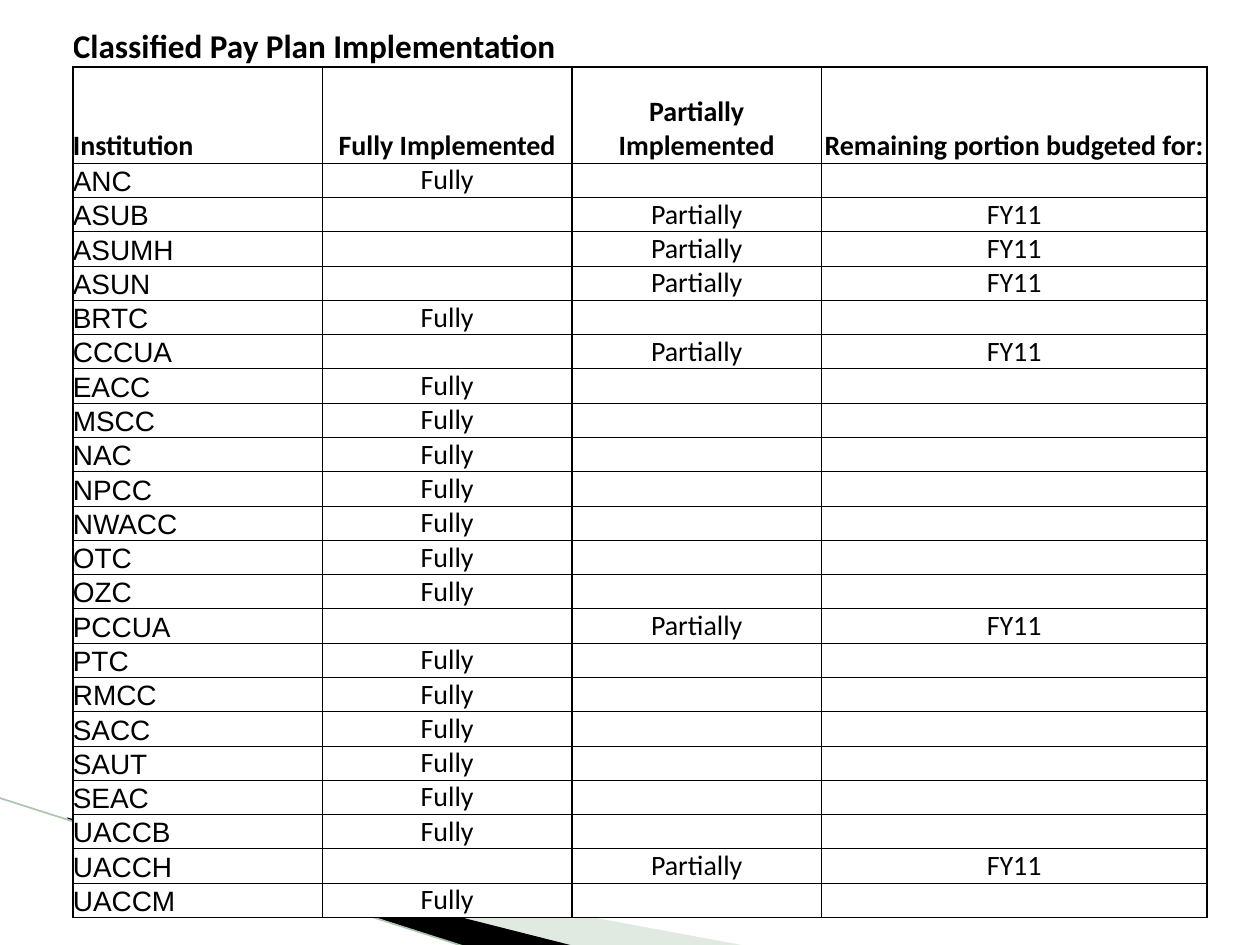
"""Build the classified pay plan implementation slide."""
from lxml import etree
from pptx import Presentation
from pptx import util as u
from pptx.dml.color import RGBColor
from pptx.enum import shapes, text
from pptx.oxml.ns import qn

TITLE = "Classified Pay Plan Implementation"
HEADINGS = ("Institution", "Fully Implemented", "Partially Implemented",
            "Remaining portion budgeted for:")
INSTITUTIONS = ("ANC", "ASUB", "ASUMH", "ASUN", "BRTC", "CCCUA", "EACC", "MSCC",
                "NAC", "NPCC", "NWACC", "OTC", "OZC", "PCCUA", "PTC", "RMCC",
                "SACC", "SAUT", "SEAC", "UACCB", "UACCH", "UACCM")
PARTIAL = {"ASUB", "ASUMH", "ASUN", "CCCUA", "PCCUA", "UACCH"}
FULL_STATUS = ("Fully", "", "")
PARTIAL_STATUS = ("", "Partially", "FY11")

COLORS = {"ink": "000000", "paper": "FFFFFF", "sage": "B3CBB5", "rule": "ACC6AE"}
WEDGES = (
    ("sage", 40, ((1.4, 16.54), (15.11, 19.08), (11.58, 19.08), (1.4, 16.51))),
    ("ink", 100, ((1.35, 16.48), (11.61, 19.08), (9.45, 19.1), (1.37, 16.51))),
)
RULE_ENDS = (-0.03, 16.08, 9.42, 19.1)
TABLE_LEFT, TABLE_TOP = 1.47, 0
COLUMN_WIDTHS = (5.03, 5.03, 5.03, 7.77)
TITLE_HEIGHT, HEADING_HEIGHT, BODY_HEIGHT = 1.35, 1.94, 0.69
THICK, THIN = 1, 0.5

CELL_FORMAT = {"margin_left": 0, "margin_top": 0, "margin_right": 0,
               "margin_bottom": 0, "vertical_anchor": text.MSO_ANCHOR.BOTTOM}
TITLE_FONT = {"name": "Calibri", "size": u.Pt(19), "bold": True}
HEADING_FONT = {"name": "Calibri", "size": u.Pt(16), "bold": True}
NAME_FONT = {"name": "Arial", "size": u.Pt(16), "bold": False}
STATUS_FONT = {"name": "Calibri", "size": u.Pt(16), "bold": False}


def apply(target, values):
    for key, value in values.items():
        setattr(target, key, value)


def color(name):
    return RGBColor.from_string(COLORS[name])


def draw_wedge(slide, fill, opacity, corners):
    points = [(u.Cm(x), u.Cm(y)) for x, y in corners]
    builder = slide.shapes.build_freeform(*points[0])
    builder.add_line_segments(points[1:], close=True)
    wedge = builder.convert_to_shape()
    wedge.shadow.inherit = False
    wedge.line.fill.background()
    wedge.fill.solid()
    wedge.fill.fore_color.rgb = color(fill)
    if opacity < 100:
        shade = next(wedge.element.iter(qn("a:srgbClr")))
        etree.SubElement(shade, qn("a:alpha"), val=str(opacity * 1000))


def draw_rule(slide):
    rule = slide.shapes.add_connector(
        shapes.MSO_CONNECTOR.STRAIGHT, *map(u.Cm, RULE_ENDS))
    rule.line.color.rgb = color("rule")
    rule.line.width = u.Pt(0.95)
    etree.SubElement(rule.element.spPr, qn("a:effectLst"))


def set_borders(cell, borders):
    properties = cell._tc.get_or_add_tcPr()
    for side in "LRTB":
        if side in borders:
            border = etree.SubElement(properties, qn(f"a:ln{side}"),
                                      w=str(u.Pt(borders[side])))
            fill = etree.SubElement(border, qn("a:solidFill"))
            etree.SubElement(fill, qn("a:srgbClr"), val=COLORS["ink"])


def fill_cell(cell, words, font, centred, borders):
    apply(cell, CELL_FORMAT)
    set_borders(cell, borders)
    cell.fill.solid()
    cell.fill.fore_color.rgb = color("paper")
    paragraph = cell.text_frame.paragraphs[0]
    if centred:
        paragraph.alignment = text.PP_ALIGN.CENTER
    if words:
        run = paragraph.add_run()
        run.text = words
        apply(run.font, font)
        run.font.color.rgb = color("ink")
    else:
        etree.SubElement(paragraph._p, qn("a:endParaRPr"),
                         sz=str(int(font["size"].pt * 100)))


def draw_table(slide):
    statuses = [(name, *(PARTIAL_STATUS if name in PARTIAL else FULL_STATUS))
                for name in INSTITUTIONS]
    rows = [(TITLE, "", "", ""), HEADINGS, *statuses]
    heights = [TITLE_HEIGHT, HEADING_HEIGHT] + [BODY_HEIGHT] * len(statuses)
    frame = (TABLE_LEFT, TABLE_TOP, sum(COLUMN_WIDTHS), sum(heights))
    table = slide.shapes.add_table(len(rows), len(HEADINGS), *map(u.Cm, frame)).table
    apply(table, {"first_row": False, "horz_banding": False})
    for column, width in zip(table.columns, COLUMN_WIDTHS):
        column.width = u.Cm(width)
    for index, (values, height) in enumerate(zip(rows, heights)):
        table.rows[index].height = u.Cm(height)
        if index == 0:
            borders = {"B": THICK}
        else:
            borders = {"L": THICK, "R": THICK,
                       "T": THICK if index == 1 else THIN,
                       "B": THICK if index == len(rows) - 1 else THIN}
        for position, words in enumerate(values):
            body_font = STATUS_FONT if position else NAME_FONT
            font = (TITLE_FONT, HEADING_FONT)[index] if index < 2 else body_font
            fill_cell(table.cell(index, position), words, font, position > 0, borders)
    table.cell(0, 0).merge(table.cell(0, len(HEADINGS) - 1))


def main():
    deck = Presentation()
    apply(deck, {"slide_width": u.Cm(25.4), "slide_height": u.Cm(19.05)})
    slide = deck.slides.add_slide(deck.slide_layouts[6])
    for wedge in WEDGES:
        draw_wedge(slide, *wedge)
    draw_rule(slide)
    draw_table(slide)
    deck.save("out.pptx")


if __name__ == "__main__":
    main()
